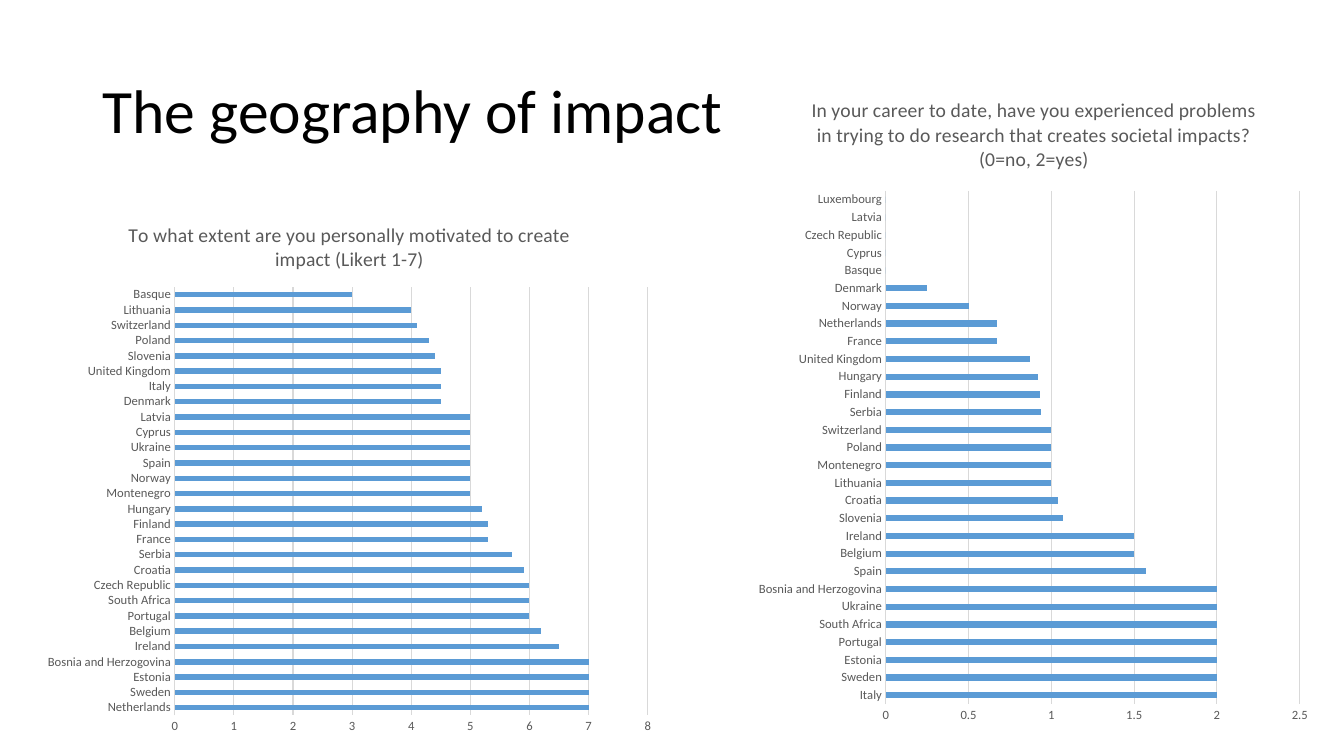
from dataclasses import dataclass

from lxml.etree import SubElement
from pptx import Presentation
from pptx.chart.data import CategoryChartData
from pptx.dml.color import RGBColor
from pptx.enum.chart import XL_CHART_TYPE, XL_TICK_MARK
from pptx.enum.text import MSO_ANCHOR
from pptx.oxml.ns import qn
from pptx.util import Inches, Pt

FONT = "Calibri"
BLACK, GREY, PALE, BLUE = "000000", "595959", "D9D9D9", "5B9BD5"
WIDTH, HEIGHT = Inches(13.33), Inches(7.5)


@dataclass(frozen=True)
class Area:
    left: float
    top: float
    width: float
    height: float

    def on_page(self) -> tuple[int, int, int, int]:
        return (
            round(WIDTH * self.left / 100),
            round(HEIGHT * self.top / 100),
            round(WIDTH * self.width / 100),
            round(HEIGHT * self.height / 100),
        )


@dataclass(frozen=True)
class CountryChart:
    title: str
    area: Area
    plot: Area
    maximum: float
    step: float
    scores: dict[str, float]


MOTIVATION = CountryChart(
    "To what extent are you personally motivated to create impact (Likert 1-7)",
    Area(2.63, 26.67, 46.74, 72),
    Area(22.2, 15.7, 75.3, 78.7),
    8,
    1,
    {
        "Netherlands": 7, "Sweden": 7, "Estonia": 7, "Bosnia and Herzogovina": 7,
        "Ireland": 6.5, "Belgium": 6.2, "Portugal": 6, "South Africa": 6,
        "Czech Republic": 6, "Croatia": 5.9, "Serbia": 5.7, "France": 5.3,
        "Finland": 5.3, "Hungary": 5.2, "Montenegro": 5, "Norway": 5,
        "Spain": 5, "Ukraine": 5, "Cyprus": 5, "Latvia": 5,
        "Denmark": 4.5, "Italy": 4.5, "United Kingdom": 4.5, "Slovenia": 4.4,
        "Poland": 4.3, "Switzerland": 4.1, "Lithuania": 4, "Basque": 3,
    },
)
PROBLEMS = CountryChart(
    "In your career to date, have you experienced problems in trying to do "
    "research that creates societal impacts? (0=no, 2=yes)",
    Area(55.66, 9.87, 42.54, 87.47),
    Area(24.1, 17.6, 72.4, 77.6),
    2.5,
    0.5,
    {
        "Italy": 2, "Sweden": 2, "Estonia": 2, "Portugal": 2,
        "South Africa": 2, "Ukraine": 2, "Bosnia and Herzogovina": 2, "Spain": 1.57,
        "Belgium": 1.5, "Ireland": 1.5, "Slovenia": 1.07, "Croatia": 1.04,
        "Lithuania": 1, "Montenegro": 1, "Poland": 1, "Switzerland": 1,
        "Serbia": 0.94, "Finland": 0.93, "Hungary": 0.92, "United Kingdom": 0.87,
        "France": 0.67, "Netherlands": 0.67, "Norway": 0.5, "Denmark": 0.25,
        "Basque": 0, "Cyprus": 0, "Czech Republic": 0, "Latvia": 0,
        "Luxembourg": 0,
    },
)


def colour(value: str) -> RGBColor:
    return RGBColor.from_string(value)


def assign(target, formats: dict) -> None:
    for name, value in formats.items():
        setattr(target, name, value)


def style_font(font, size: float, shade: str) -> None:
    assign(font, {"name": FONT, "size": Pt(size), "bold": False})
    font.color.rgb = colour(shade)


def style_line(line) -> None:
    line.width = Pt(0.75)
    line.color.rgb = colour(PALE)


def place_plot(chart, plot: Area) -> None:
    plot_area = chart.plots[0]._element.getparent()
    layout = plot_area.find(qn("c:layout"))
    if layout is None:
        layout = SubElement(plot_area, qn("c:layout"))
        plot_area.insert(0, layout)
    manual = SubElement(layout, qn("c:manualLayout"))
    settings = {
        "layoutTarget": "inner", "xMode": "edge", "yMode": "edge",
        "x": plot.left / 100, "y": plot.top / 100,
        "w": plot.width / 100, "h": plot.height / 100,
    }
    for name, value in settings.items():
        SubElement(manual, qn(f"c:{name}")).set("val", str(value))


def add_title(page) -> None:
    box = page.shapes.add_textbox(*Area(6.9, 5.33, 86.27, 19.33).on_page())
    assign(box.text_frame, {"word_wrap": True, "vertical_anchor": MSO_ANCHOR.MIDDLE})
    para = box.text_frame.paragraphs[0]
    para.line_spacing = 0.9
    span = para.add_run()
    span.text = "The geography of impact"
    style_font(span.font, 44, BLACK)


def add_country_chart(page, spec_data: CountryChart) -> None:
    data = CategoryChartData()
    data.categories = list(spec_data.scores)
    data.add_series("Series 1", list(spec_data.scores.values()))
    chart = page.shapes.add_chart(
        XL_CHART_TYPE.BAR_CLUSTERED, *spec_data.area.on_page(), data
    ).chart
    assign(chart, {"has_legend": False, "has_title": True})
    style_font(chart.font, 10, BLACK)

    para = chart.chart_title.text_frame.paragraphs[0]
    span = para.add_run()
    span.text = spec_data.title
    style_font(span.font, 14, GREY)
    chart.chart_title.include_in_layout = False

    bars = chart.plots[0]
    assign(bars, {"gap_width": 182, "vary_by_categories": False})
    fill = bars.series[0].format.fill
    fill.solid()
    fill.fore_color.rgb = colour(BLUE)

    for axis in (chart.category_axis, chart.value_axis):
        assign(axis, {
            "major_tick_mark": XL_TICK_MARK.NONE,
            "minor_tick_mark": XL_TICK_MARK.NONE,
        })
        style_font(axis.tick_labels.font, 9, GREY)
    style_line(chart.category_axis.format.line)
    assign(chart.value_axis, {
        "minimum_scale": 0,
        "maximum_scale": spec_data.maximum,
        "major_unit": spec_data.step,
        "has_major_gridlines": True,
    })
    chart.value_axis.format.line.fill.background()
    style_line(chart.value_axis.major_gridlines.format.line)
    place_plot(chart, spec_data.plot)


def main() -> None:
    deck = Presentation()
    assign(deck, {"slide_width": WIDTH, "slide_height": HEIGHT})
    page = deck.slides.add_slide(deck.slide_layouts[6])
    add_title(page)
    for country_chart in (MOTIVATION, PROBLEMS):
        add_country_chart(page, country_chart)
    deck.save("out.pptx")


if __name__ == "__main__":
    main()
